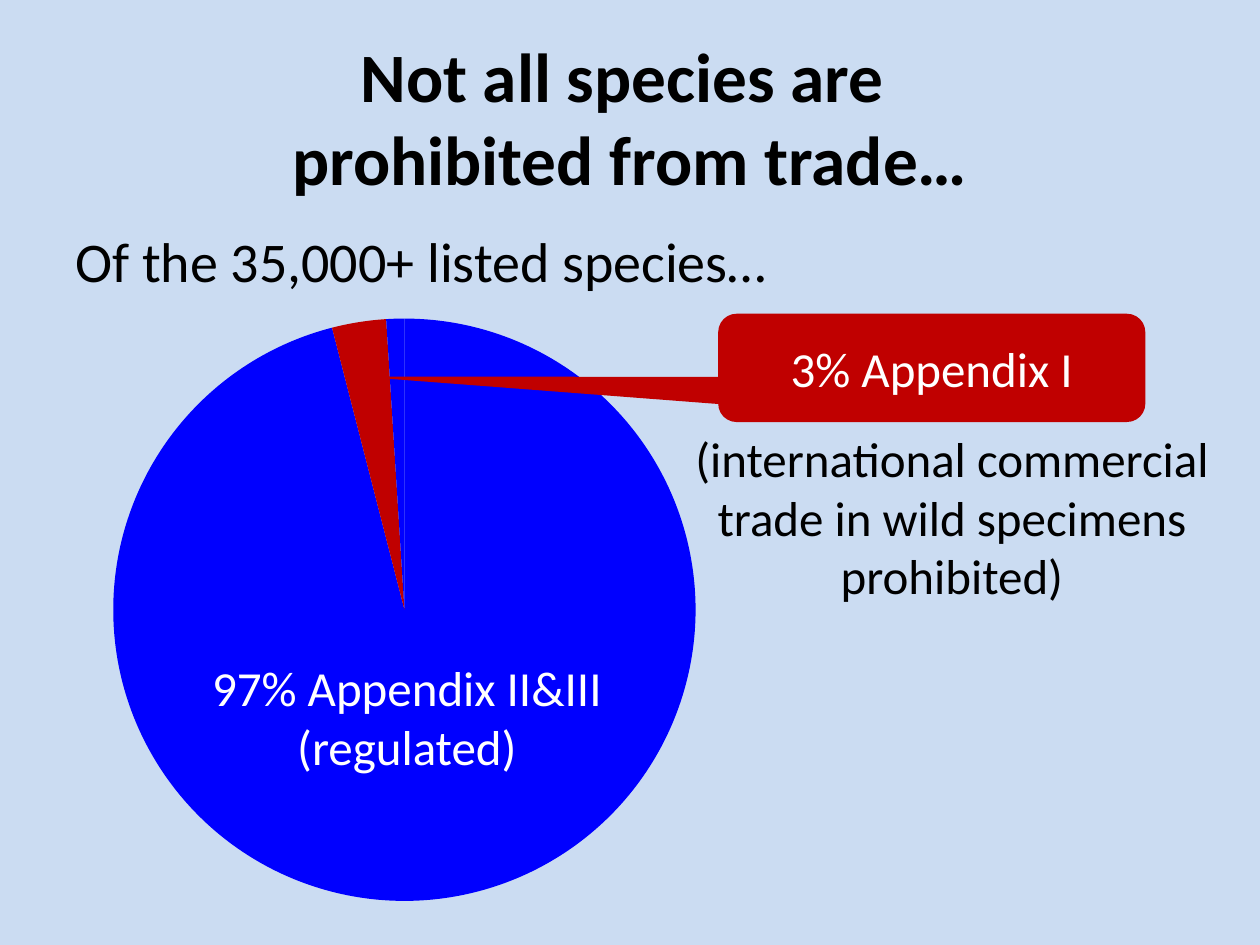
from dataclasses import dataclass
from typing import Optional

from lxml import etree
from pptx import Presentation
from pptx import util as u
from pptx.chart import data as cd
from pptx.dml.color import RGBColor
from pptx.enum import chart as ch
from pptx.enum import shapes as sh
from pptx.enum import text as tx
from pptx.oxml import parse_xml
from pptx.oxml.ns import nsdecls, qn

SKY = RGBColor(0x55, 0x8E, 0xD5)
BLUE = RGBColor(0x00, 0x00, 0xFF)
RED = RGBColor(0xC0, 0x00, 0x00)
BLACK = RGBColor(0x00, 0x00, 0x00)
WHITE = RGBColor(0xFF, 0xFF, 0xFF)
FACE = "Calibri"
MID, TOP = tx.MSO_ANCHOR.MIDDLE, tx.MSO_ANCHOR.TOP
CENTER, LEFT = tx.PP_ALIGN.CENTER, tx.PP_ALIGN.LEFT


@dataclass
class Label:
    words: str
    box: tuple[float, float, float, float]
    size: float = 28
    color: RGBColor = BLACK
    bold: bool = False
    align: tx.PP_ALIGN = CENTER
    anchor: tx.MSO_ANCHOR = MID
    kind: Optional[sh.MSO_SHAPE] = None
    fill: Optional[RGBColor] = None
    adjust: tuple[float, ...] = ()


LABELS = [
    Label("Not all species are \vprohibited from trade…", (0.5, 0.3, 9, 1.25), 39.6, bold=True),
    Label("Of the 35,000+ listed species…", (0.5, 1.75, 9.07, 0.74), 32, align=LEFT, anchor=TOP),
    Label("97% Appendix II&III (regulated)", (1.46, 5.1, 3.54, 1.17), color=WHITE,
          kind=sh.MSO_SHAPE.ROUNDED_RECTANGLE, fill=BLUE),
    Label("(international commercial trade in wild specimens prohibited)",
          (5.39, 3.35, 4.33, 1.51), anchor=TOP),
    Label("3% Appendix I", (5.7, 2.49, 3.39, 0.86), color=WHITE,
          kind=sh.MSO_SHAPE.ROUNDED_RECTANGULAR_CALLOUT, fill=RED, adjust=(-1.34, 0.08, 0.17)),
]


def draw_block(slide, kind: sh.MSO_SHAPE, box: tuple, fill: RGBColor):
    """Add a filled shape without line or shadow."""
    block = slide.shapes.add_shape(kind, *map(u.Inches, box))
    block.shadow.inherit = False
    block.fill.solid()
    block.fill.fore_color.rgb = fill
    block.line.fill.background()
    return block


def draw_label(slide, label: Label) -> None:
    """Add a label, inside a shape if it names one."""
    if label.kind is None:
        item = slide.shapes.add_textbox(*map(u.Inches, label.box))
    else:
        item = draw_block(slide, label.kind, label.box, label.fill)
        for index, value in enumerate(label.adjust):
            item.adjustments[index] = value
    frame = item.text_frame
    frame.word_wrap = True
    frame.vertical_anchor = label.anchor
    frame.text = label.words
    para = frame.paragraphs[0]
    para.alignment = label.align
    font = para.font
    font.name, font.size, font.bold = FACE, u.Pt(label.size), label.bold
    font.color.rgb = label.color


def draw_pie(slide) -> None:
    """Add the pie of listed species by appendix."""
    data = cd.CategoryChartData()
    data.categories = ["1", "2", "3"]
    data.add_series("Series 1", (96, 3, 1))
    box = map(u.Inches, (0, 2.38, 6.42, 4.92))
    chart = slide.shapes.add_chart(ch.XL_CHART_TYPE.PIE, *box, data).chart
    chart.has_legend = chart.has_title = False
    chart.font.name, chart.font.size = FACE, u.Pt(10)
    chart.font.color.rgb = BLACK
    plot = chart.plots[0]
    plot.vary_by_categories = True
    for index, color in enumerate((BLUE, RED, BLUE)):
        style = plot.series[0].points[index].format
        style.fill.solid()
        style.fill.fore_color.rgb = color
        style.line.fill.background()
    area = chart.element.find(".//" + qn("c:plotArea"))
    for old in area.findall(qn("c:layout")):
        area.remove(old)
    sides = (("x", 0.14), ("y", 0.03), ("w", 0.72), ("h", 0.94))
    modes = '<c:layoutTarget val="inner"/><c:xMode val="edge"/><c:yMode val="edge"/>'
    place = "".join(f'<c:{side} val="{value}"/>' for side, value in sides)
    area.insert(0, parse_xml(
        f'<c:layout {nsdecls("c")}><c:manualLayout>{modes}{place}</c:manualLayout></c:layout>'))


def main() -> None:
    """Build the slide and save it."""
    deck = Presentation()
    deck.slide_width, deck.slide_height = u.Inches(10), u.Inches(7.5)
    slide = deck.slides.add_slide(deck.slide_layouts[6])
    back = draw_block(slide, sh.MSO_SHAPE.RECTANGLE, (0, 0, 10, 7.5), SKY)
    tint = back.fill._xPr.find(".//" + qn("a:srgbClr"))
    etree.SubElement(tint, qn("a:alpha"), val="30000")
    draw_pie(slide)
    for label in LABELS:
        draw_label(slide, label)
    deck.save("out.pptx")


if __name__ == "__main__":
    main()
